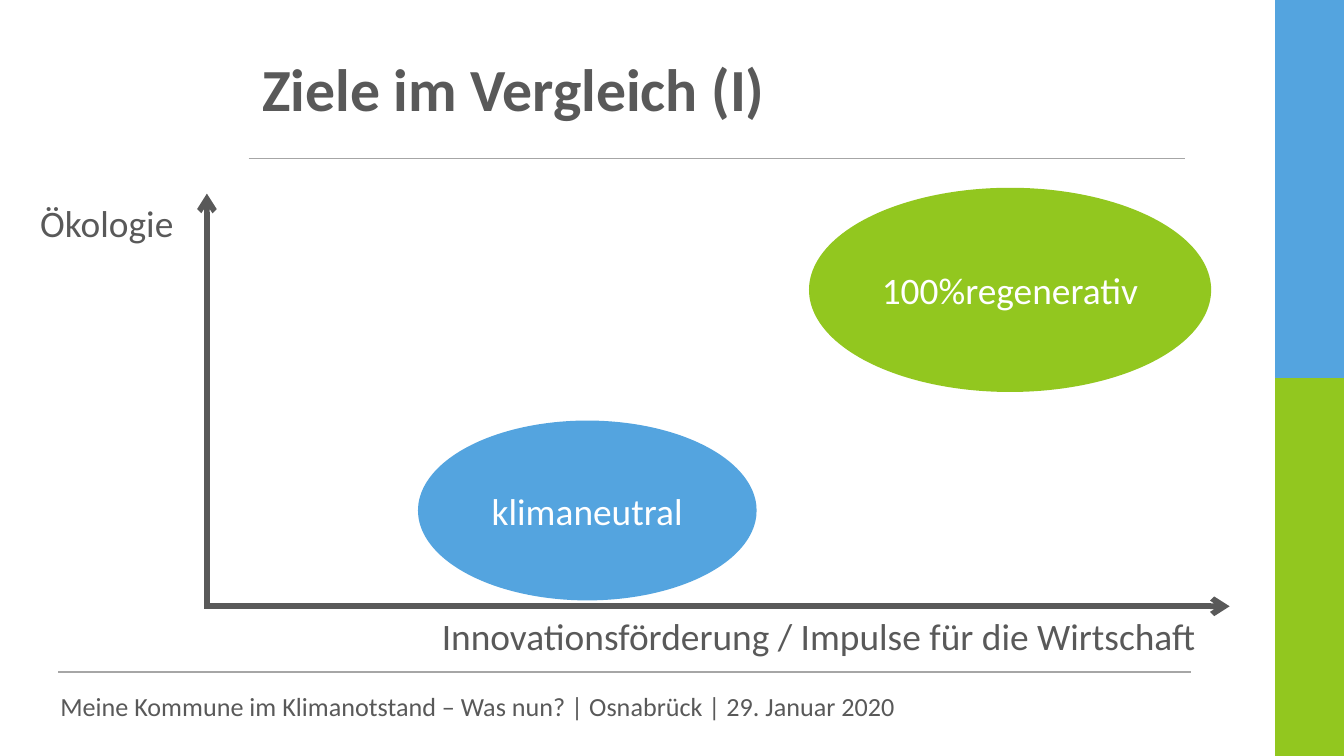
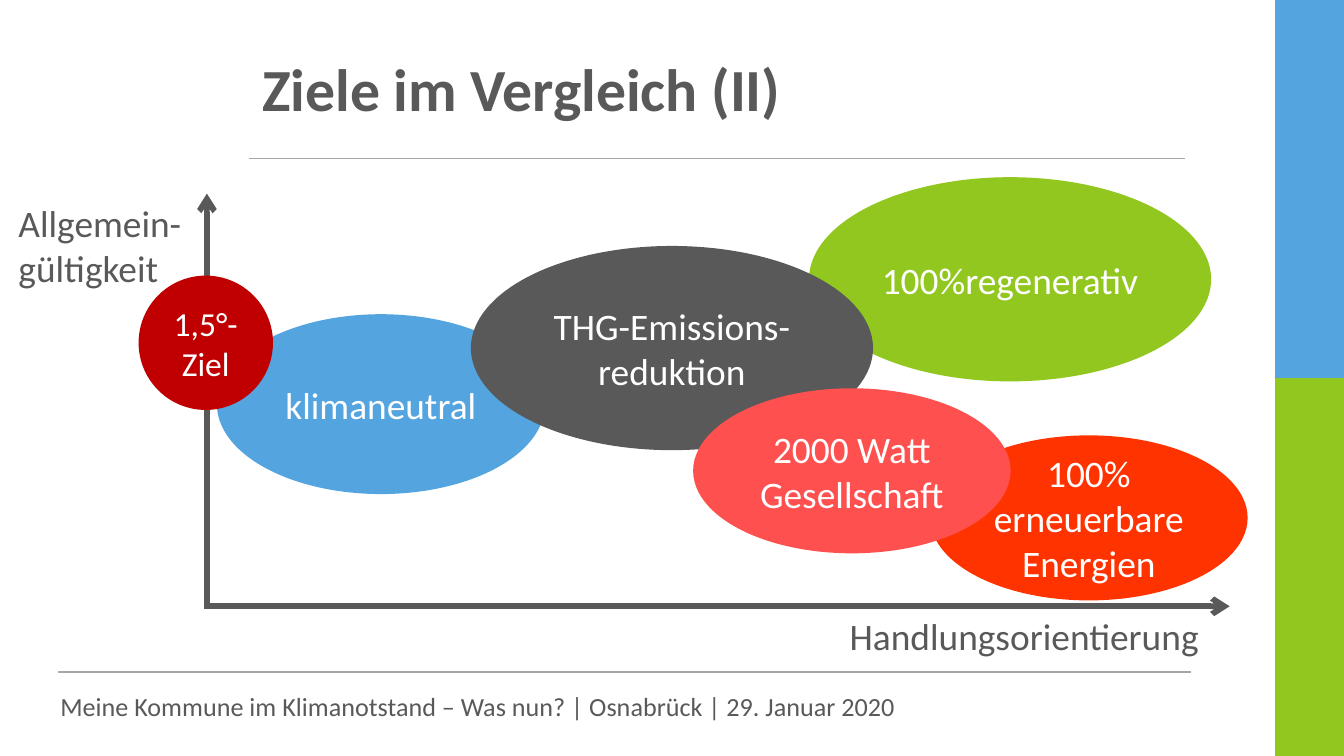
import pptx
import pptx.util
import pptx.dml.color
import pptx.enum.shapes
import pptx.enum.text
import lxml.etree
from pptx.oxml.ns import qn

Cm = pptx.util.Cm
RGBColor = pptx.dml.color.RGBColor
SHAPE = pptx.enum.shapes.MSO_SHAPE
ALIGN = pptx.enum.text.PP_ALIGN
ANCHOR = pptx.enum.text.MSO_ANCHOR

BLUE = RGBColor(0x54, 0xA4, 0xDF)
GREEN = RGBColor(0x92, 0xC7, 0x1F)
GREY = RGBColor(0x59, 0x59, 0x59)
RULE_GREY = RGBColor(0xA6, 0xA6, 0xA6)
DARK_RED = RGBColor(0xC0, 0x00, 0x00)
ORANGE_RED = RGBColor(0xFF, 0x33, 0x00)
LIGHT_RED = RGBColor(0xFF, 0x50, 0x50)
WHITE = RGBColor(0xFF, 0xFF, 0xFF)

FOOTER = "Meine Kommune im Klimanotstand – Was nun? | Osnabrück | 29. Januar 2020"
BAND_HEIGHT = 7.145
GOAL_SIZE = (7.6, 3.86)
SMALL_GOAL_SIZE = (6, 3.12)

# Per slide: title, y-axis label with its box, x-axis label with its alignment,
# goals as (text, left, top, size, colour, font size)
comparisons = [
    ("Ziele im Vergleich (I)",
     "Ökologie", (0.51, 3.66, 3.02, 1.12),
     "Innovationsförderung / Impulse für die Wirtschaft", ALIGN.LEFT,
     [("klimaneutral", 7.9, 7.95, (6.4, 3.4), BLUE, 20),
      ("100%regenerativ", 15.29, 3.55, GOAL_SIZE, GREEN, 20)]),
    ("Ziele im Vergleich (II)",
     "Allgemein-gültigkeit", (0.1, 3.66, 3.76, 1.96),
     "Handlungsorientierung", ALIGN.RIGHT,
     [("klimaneutral", 4.1, 5.94, (6.2, 3.4), BLUE, 20),
      ("100%regenerativ", 15.29, 3.35, GOAL_SIZE, GREEN, 20),
      ("1,5°-Ziel", 2.62, 5.21, (2.54, 2.54), DARK_RED, 18),
      ("100% erneuerbare Energien", 17.58, 8.23, SMALL_GOAL_SIZE, ORANGE_RED, 20),
      ("THG-Emissions-reduktion", 8.9, 4.65, GOAL_SIZE, GREY, 20),
      ("2000 Watt\nGesellschaft", 13.1, 7.34, SMALL_GOAL_SIZE, LIGHT_RED, 20)]),
]


def write(shape, text, size, color, align=ALIGN.LEFT, anchor=ANCHOR.TOP, bold=False):
    frame = shape.text_frame
    frame.text = text
    frame.word_wrap = True
    frame.vertical_anchor = anchor
    font_format = {"name": "Calibri", "size": pptx.util.Pt(size), "bold": bold}
    for paragraph in frame.paragraphs:
        paragraph.alignment = align
        for attribute, value in font_format.items():
            setattr(paragraph.font, attribute, value)
        paragraph.font.color.rgb = color


def draw_line(slide, ends, color, width, arrow=False):
    line = slide.shapes.add_connector(
        pptx.enum.shapes.MSO_CONNECTOR.STRAIGHT, *[Cm(end) for end in ends])
    line.line.color.rgb = color
    line.line.width = pptx.util.Pt(width)
    properties = line._element.spPr
    if arrow:
        lxml.etree.SubElement(properties.find(qn("a:ln")), qn("a:tailEnd"), type="arrow")
    lxml.etree.SubElement(properties, qn("a:effectLst"))


presentation = pptx.Presentation()
presentation.slide_width = Cm(25.4)
presentation.slide_height = Cm(2 * BAND_HEIGHT)
title_only = presentation.slide_layouts[5]

for heading, y_label, y_label_box, x_label, x_align, goals in comparisons:
    slide = presentation.slides.add_slide(title_only)

    # Bands on the right edge
    for row, color in enumerate((BLUE, GREEN)):
        band = slide.shapes.add_shape(
            SHAPE.RECTANGLE, Cm(24.1), Cm(row * BAND_HEIGHT), Cm(1.3), Cm(BAND_HEIGHT))
        band.shadow.inherit = False
        band.fill.solid()
        band.fill.fore_color.rgb = color
        band.line.fill.background()

    # Rules under the title and above the footer
    draw_line(slide, (4.7, 3, 22.4, 3), RULE_GREY, 0.75)
    draw_line(slide, (1.1, 12.7, 22.5, 12.7), RULE_GREY, 0.75)

    # Title
    title = slide.shapes.title
    title_place = {"left": 4.7, "top": 0.3, "width": 17.8, "height": 2.72}
    for attribute, value in title_place.items():
        setattr(title, attribute, Cm(value))
    write(title, heading, 32, GREY, anchor=ANCHOR.MIDDLE, bold=True)

    # Axes
    draw_line(slide, (3.91, 11.46, 3.91, 3.66), GREY, 3, arrow=True)
    draw_line(slide, (3.86, 11.46, 23.24, 11.46), GREY, 3, arrow=True)

    # Footer and axis labels
    for text, box, size, align in (
            (FOOTER, (0.89, 12.93, 21.41, 0.74), 14, ALIGN.LEFT),
            (y_label, y_label_box, 20, ALIGN.LEFT),
            (x_label, (8.1, 11.46, 14.81, 1.12), 20, x_align)):
        label = slide.shapes.add_textbox(*[Cm(length) for length in box])
        write(label, text, size, GREY, align)

    # Goals placed between the axes
    for text, left, top, (width, height), color, size in goals:
        goal = slide.shapes.add_shape(SHAPE.OVAL, Cm(left), Cm(top), Cm(width), Cm(height))
        goal.shadow.inherit = False
        goal.fill.solid()
        goal.fill.fore_color.rgb = color
        goal.line.fill.background()
        write(goal, text, size, WHITE, ALIGN.CENTER, ANCHOR.MIDDLE)

presentation.save("out.pptx")
